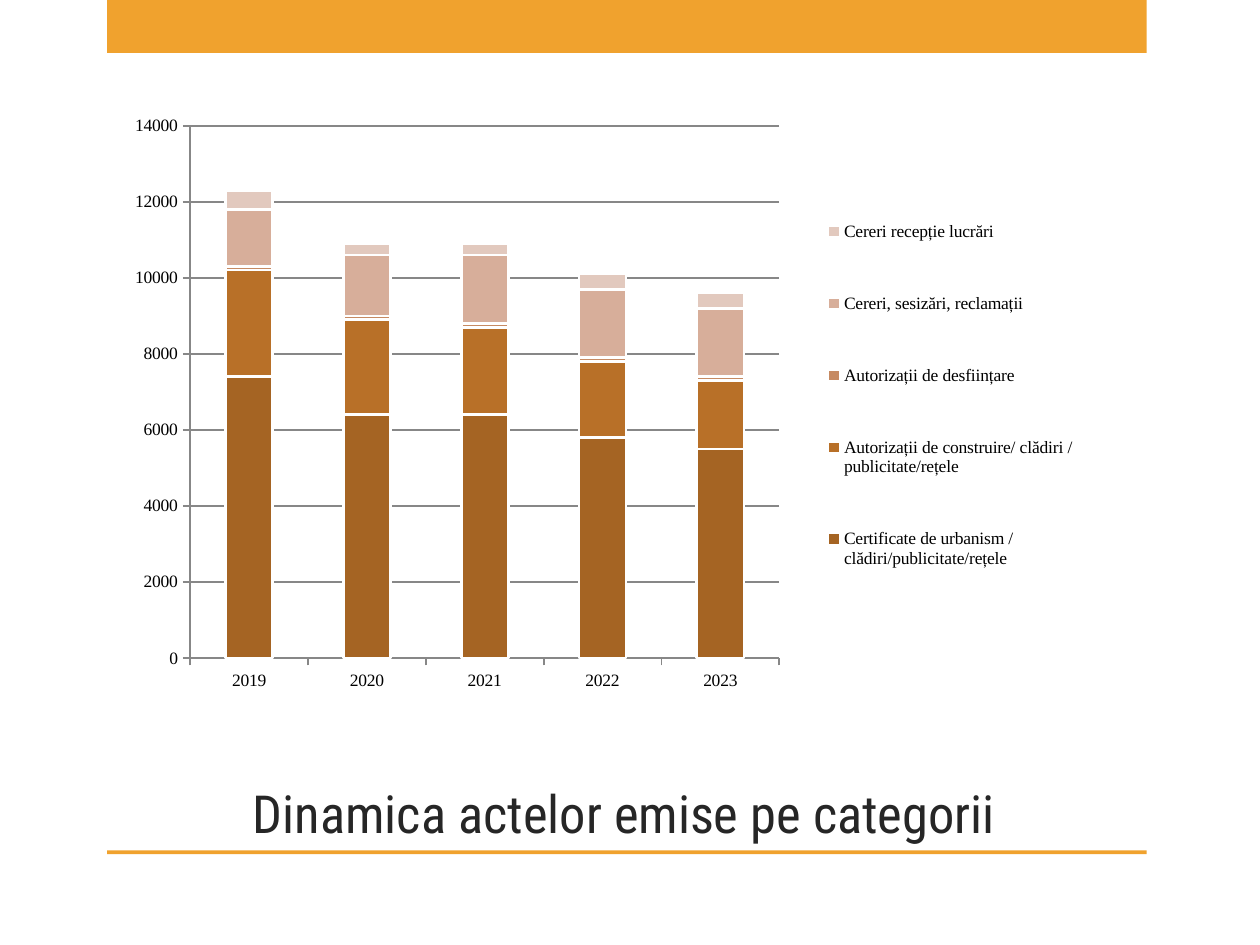
from lxml.etree import SubElement
from pptx import Presentation
from pptx.chart.data import CategoryChartData
from pptx.dml.color import RGBColor
from pptx.enum.chart import XL_CHART_TYPE as ChartType, XL_LEGEND_POSITION as LegendPosition
from pptx.enum.chart import XL_TICK_MARK as TickMark
from pptx.enum.shapes import MSO_SHAPE as Shape
from pptx.enum.text import MSO_ANCHOR as Anchor, PP_ALIGN as Align
from pptx.oxml.ns import qn
from pptx.util import Inches, Pt

ORANGE = RGBColor(0xF0, 0xA2, 0x2E)
DARK = RGBColor(0x26, 0x26, 0x26)
GRAY = RGBColor(0x87, 0x87, 0x87)
WHITE = RGBColor(0xFF, 0xFF, 0xFF)
BLACK = RGBColor(0, 0, 0)

TITLE = "Dinamica actelor emise pe categorii"
YEARS = ["2019", "2020", "2021", "2022", "2023"]
SERIES = [
    ("Certificate de urbanism /clădiri/publicitate/rețele",
     [7400, 6400, 6400, 5800, 5500], RGBColor(0xA5, 0x64, 0x23)),
    ("Autorizații de construire/ clădiri / publicitate/rețele",
     [2800, 2500, 2300, 2000, 1800], RGBColor(0xB8, 0x70, 0x28)),
    ("Autorizații de desființare",
     [100, 100, 100, 100, 100], RGBColor(0xC6, 0x8A, 0x62)),
    ("Cereri, sesizări, reclamații",
     [1500, 1600, 1800, 1800, 1800], RGBColor(0xD7, 0xAE, 0x9A)),
    ("Cereri recepție lucrări",
     [500, 300, 300, 400, 400], RGBColor(0xE2, 0xC9, 0xBE)),
]
BANDS = [(0, 0.42), (6.75, 0.03)]
BAND_LEFT, BAND_WIDTH = 0.85, 8.25
CONTENT_LEFT = 0.83
PLOT_SHARES = (0.08, 0.01, 0.55, 0.85)
LEGEND_SHARES = (0.66, 0.08, 0.26, 0.72)


def place(element, position, shares, inner=False):
    for old in element.findall(qn("c:layout")):
        element.remove(old)
    layout = SubElement(element, qn("c:layout"))
    element.insert(position, layout)
    manual = SubElement(layout, qn("c:manualLayout"))
    settings = [("layoutTarget", "inner")] if inner else []
    settings += [("xMode", "edge"), ("yMode", "edge")]
    settings += zip("xywh", shares)
    for tag, value in settings:
        SubElement(manual, qn(f"c:{tag}")).set("val", str(value))


def add_bands(slide):
    for top, height in BANDS:
        band = slide.shapes.add_shape(Shape.RECTANGLE, Inches(BAND_LEFT), Inches(top),
                                      Inches(BAND_WIDTH), Inches(height))
        band.shadow.inherit = False
        band.fill.solid()
        band.fill.fore_color.rgb = ORANGE
        band.line.fill.background()


def add_title(slide):
    box = slide.shapes.add_textbox(Inches(CONTENT_LEFT), Inches(6),
                                   Inches(BAND_WIDTH), Inches(0.75))
    frame = box.text_frame
    frame.word_wrap = True
    frame.vertical_anchor = Anchor.BOTTOM
    paragraph = frame.paragraphs[0]
    paragraph.alignment = Align.CENTER
    run = paragraph.add_run()
    run.text = TITLE
    run.font.name = "Roboto Condensed"
    run.font.size = Pt(30)
    run.font.color.rgb = DARK


def style_line(line, color, width):
    line.color.rgb = color
    line.width = Pt(width)


def add_acts_chart(slide):
    data = CategoryChartData()
    data.categories = YEARS
    for name, values, _ in SERIES:
        data.add_series(name, values)
    chart = slide.shapes.add_chart(ChartType.COLUMN_STACKED, Inches(CONTENT_LEFT), Inches(0.92),
                                   Inches(8.5), Inches(5), data).chart
    chart.has_title = False
    chart.font.name = "Times New Roman"
    chart.font.size = Pt(10)
    chart.font.color.rgb = BLACK

    plot = chart.plots[0]
    plot.gap_width = 150
    plot.overlap = 100
    plot.vary_by_categories = False
    for series, (_, _, color) in zip(plot.series, SERIES):
        series.format.fill.solid()
        series.format.fill.fore_color.rgb = color
        style_line(series.format.line, WHITE, 1.5)

    value_axis = chart.value_axis
    value_axis.minimum_scale = 0
    value_axis.maximum_scale = 14000
    value_axis.major_unit = 2000
    value_axis.has_major_gridlines = True
    style_line(value_axis.major_gridlines.format.line, GRAY, 1)
    for axis in (chart.category_axis, value_axis):
        axis.major_tick_mark = TickMark.OUTSIDE
        style_line(axis.format.line, GRAY, 1)

    chart.has_legend = True
    legend = chart.legend
    legend.position = LegendPosition.RIGHT
    legend.include_in_layout = False
    chart_element = chart.element.find(qn("c:chart"))
    place(chart_element.find(qn("c:plotArea")), 0, PLOT_SHARES, inner=True)
    place(chart_element.find(qn("c:legend")), 1, LEGEND_SHARES)


def main():
    presentation = Presentation()
    presentation.slide_width = Inches(10)
    presentation.slide_height = Inches(7.5)
    slide = presentation.slides.add_slide(presentation.slide_layouts[6])
    add_bands(slide)
    add_title(slide)
    add_acts_chart(slide)
    presentation.save("out.pptx")


if __name__ == "__main__":
    main()
